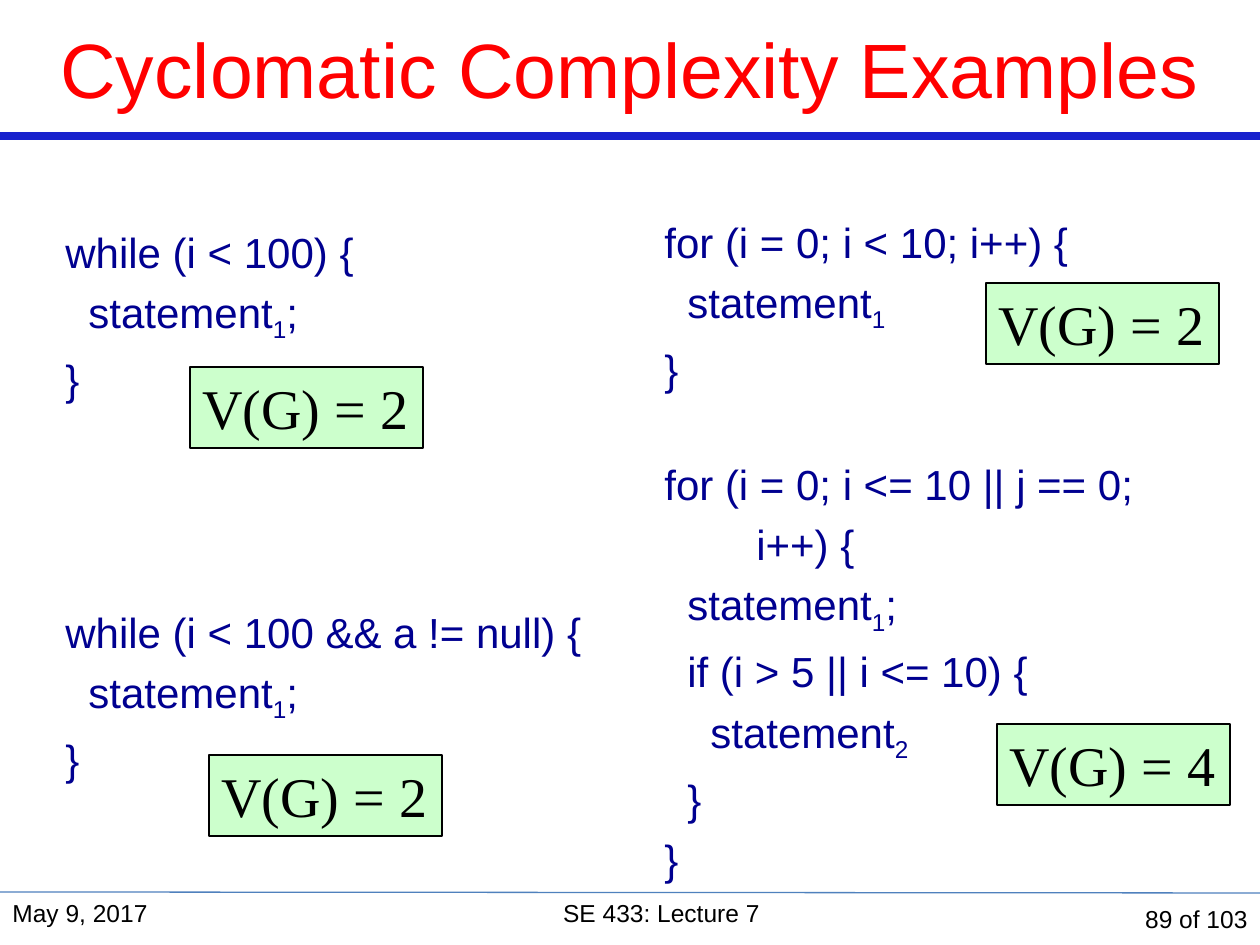
"""Build the slide of cyclomatic complexity examples."""
from dataclasses import dataclass

from pptx import Presentation
from pptx import util as u
from pptx.dml.color import RGBColor
from pptx.enum import shapes, text
from pptx.oxml.ns import qn
from lxml import etree

ALIGN = text.PP_ALIGN
ANCHOR = text.MSO_ANCHOR
INDENT = 23
BADGE_SIZE = (233, 81)


@dataclass(frozen=True)
class Line:
    content: str
    level: int = 0
    subscript: str = ""
    ending: str = ""


@dataclass(frozen=True)
class Code:
    left: int
    top: int
    width: int
    height: int
    lines: tuple[Line, ...]


@dataclass(frozen=True)
class Badge:
    left: int
    top: int
    value: int


@dataclass(frozen=True)
class Footer:
    left: int
    width: int
    content: str
    align: ALIGN
    anchor: ANCHOR = ANCHOR.TOP


@dataclass(frozen=True)
class Rule:
    start: int
    end: int
    color: str
    weight: float


CLOSE = Line("}")
STATEMENT = Line("statement", 1, "1", ";")
CODES = (
    Code(53, 220, 600, 190, (Line("while (i < 100) {"), STATEMENT, CLOSE)),
    Code(53, 600, 600, 190,
         (Line("while (i < 100 && a != null) {"), STATEMENT, CLOSE)),
    Code(652, 210, 534, 190,
         (Line("for (i = 0; i < 10; i++) {"), Line("statement", 1, "1"), CLOSE)),
    Code(652, 452, 534, 438,
         (Line("for (i = 0; i <= 10 || j == 0;"), Line("i++) {", 4), STATEMENT,
          Line("if (i > 5 || i <= 10) {", 1), Line("statement", 2, "2"),
          Line("}", 1), CLOSE)),
)
BADGES = (Badge(190, 367, 2), Badge(997, 724, 4), Badge(986, 283, 2), Badge(209, 755, 2))
FOOTERS = (
    Footer(0, 273, "May 9, 2017", ALIGN.LEFT),
    Footer(273, 777, "SE 433: Lecture 7", ALIGN.CENTER),
    Footer(1050, 210, "89 of 103", ALIGN.RIGHT, ANCHOR.MIDDLE),
)
RULES = (Rule(136, 136, "1822CD", 4.5), Rule(892, 893, "4F81BD", 0.75))


def px(length: int) -> u.Emu:
    """Turn pixels into EMU."""
    return u.Emu(round(length * 914400 / 126))


def rgb(value: str) -> RGBColor:
    """Turn a hex string into a colour."""
    return RGBColor.from_string(value)


def add_span(para, content: str, *, size: int, color: str = "000000",
             font: str = "Arial", baseline: int = 0) -> None:
    """Append formatted text to a paragraph."""
    span = para.add_run()
    span.text = content
    span.font.size = u.Pt(size)
    span.font.name = font
    span.font.color.rgb = rgb(color)
    if baseline:
        span.font._element.set("baseline", str(baseline * 1000))


def draw_rule(page, rule: Rule) -> None:
    """Draw a line across the page."""
    line = page.shapes.add_connector(
        shapes.MSO_CONNECTOR.STRAIGHT, 0, px(rule.start), px(1260), px(rule.end))
    line.line.color.rgb = rgb(rule.color)
    line.line.width = u.Pt(rule.weight)
    etree.SubElement(line._element.spPr, qn("a:effectLst"))


def draw_title(page, content: str) -> None:
    """Place and format the title placeholder."""
    title = page.shapes.title
    title.left, title.top, title.width, title.height = map(px, (0, 0, 1260, 136))
    title.text_frame.vertical_anchor = ANCHOR.MIDDLE
    para = title.text_frame.paragraphs[0]
    para.alignment = ALIGN.CENTER
    add_span(para, content, size=44, color="FF0000")


def draw_code(page, code: Code) -> None:
    """Draw a block of indented code."""
    box = page.shapes.add_textbox(
        px(code.left), px(code.top), px(code.width), px(code.height))
    frame = box.text_frame
    frame.word_wrap = True
    for number, line in enumerate(code.lines):
        para = frame.add_paragraph() if number else frame.paragraphs[0]
        para.space_before = u.Pt(5.6 if number else 0)
        para._p.get_or_add_pPr().set("marL", str(px(INDENT * line.level)))
        for content, baseline in ((line.content, 0), (line.subscript, -25), (line.ending, 0)):
            if content:
                add_span(para, content, size=24, color="000090", baseline=baseline)


def draw_badge(page, badge: Badge) -> None:
    """Draw a framed complexity value."""
    box = page.shapes.add_shape(
        shapes.MSO_SHAPE.RECTANGLE, px(badge.left), px(badge.top), *map(px, BADGE_SIZE))
    box.shadow.inherit = False
    box.fill.solid()
    box.fill.fore_color.rgb = rgb("CCFFCC")
    box.line.color.rgb = rgb("000000")
    box.line.width = u.Pt(0.75)
    frame = box.text_frame
    frame.word_wrap = False
    frame.auto_size = text.MSO_AUTO_SIZE.SHAPE_TO_FIT_TEXT
    frame.vertical_anchor = ANCHOR.TOP
    para = frame.paragraphs[0]
    para.alignment = ALIGN.LEFT
    add_span(para, f"V(G) = {badge.value}", size=32, font="Times New Roman")


def draw_footer(page, footer: Footer) -> None:
    """Draw one part of the footer."""
    box = page.shapes.add_textbox(px(footer.left), px(892), px(footer.width), px(53))
    box.text_frame.word_wrap = True
    box.text_frame.vertical_anchor = footer.anchor
    para = box.text_frame.paragraphs[0]
    para.alignment = footer.align
    add_span(para, footer.content, size=14)


def main() -> None:
    """Build and save the deck."""
    deck = Presentation()
    deck.slide_width, deck.slide_height = px(1260), px(945)
    page = deck.slides.add_slide(deck.slide_layouts.get_by_name("Title Only"))
    draw_title(page, "Cyclomatic Complexity Examples")
    for draw, items in ((draw_rule, RULES), (draw_code, CODES),
                        (draw_badge, BADGES), (draw_footer, FOOTERS)):
        for item in items:
            draw(page, item)
    deck.save("out.pptx")


if __name__ == "__main__":
    main()
